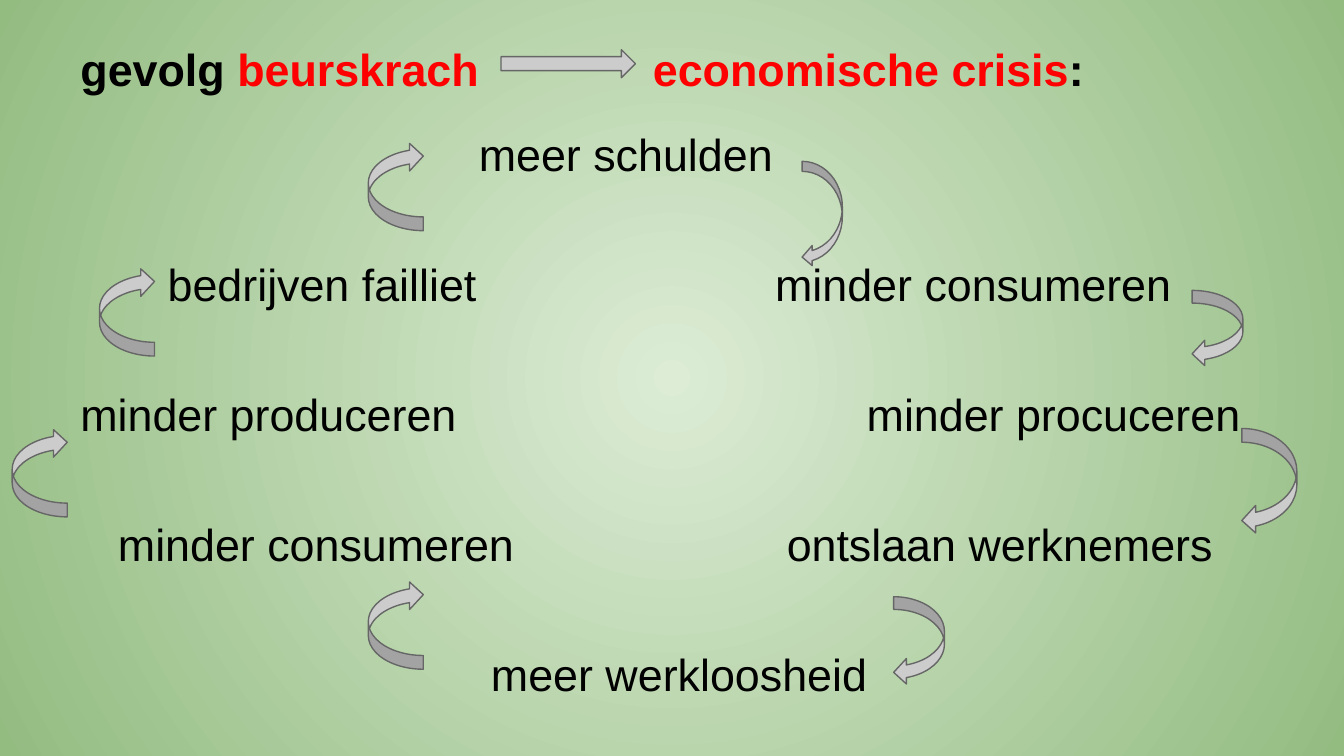
import pptx
import pptx.dml.color
import pptx.enum.shapes
import pptx.enum.text
import pptx.oxml
import pptx.oxml.ns
import pptx.util
from pptx.util import Cm

FONT = "Arial"
BLACK, RED = "000000", "FF0000"
ARROW_FILL, ARROW_LINE = "CCCCCC", "666666"
SHAPES = pptx.enum.shapes.MSO_SHAPE

ROW_TOP, ROW_PITCH, STEP_WIDTH, STEP_HEIGHT = 2.39, 2.46, 8.5, 1
STEPS = [
    ("meer schulden", 9.05, 0),
    ("bedrijven failliet", 3.17, 1),
    ("minder consumeren", 14.65, 1),
    ("minder produceren", 1.52, 2),
    ("minder procuceren", 16.38, 2),
    ("minder consumeren", 2.23, 3),
    ("ontslaan werknemers", 14.87, 3),
    ("meer werkloosheid", 9.28, 4),
]
DOWN_ARROWS = [
    (15.16, 3.05, 0.76, 2),
    (22.53, 5.49, 0.96, 1.44),
    (23.47, 8.1, 1.04, 2),
    (16.89, 11.28, 0.96, 1.67),
]
UP_ARROWS = [(6.96, 10.98), (1.88, 5.06), (0.23, 8.1), (6.96, 2.69)]
UP_ARROW_SIZE = (1.04, 1.67)


def color(value):
    return pptx.dml.color.RGBColor.from_string(value)


def format_run(run, value, bold=False):
    run.font.name = FONT
    run.font.size = pptx.util.Pt(24)
    run.font.bold = bold
    run.font.color.rgb = color(value)


def set_background(slide):
    fill = slide.background.fill
    fill.gradient()
    for stop, position, value in zip(fill.gradient_stops, (0, 1), ("DCECD5", "93BC81")):
        stop.position = position
        stop.color.rgb = color(value)
    linear = next(slide.element.iter(pptx.oxml.ns.qn("a:lin")))
    radial = pptx.oxml.parse_xml(
        f'<a:path {pptx.oxml.ns.nsdecls("a")} path="circle">'
        '<a:fillToRect l="50000" t="50000" r="50000" b="50000"/></a:path>'
    )
    linear.getparent().replace(linear, radial)


def add_title(slide, left, top, width, height):
    title = slide.shapes.title
    title.left, title.top, title.width, title.height = map(Cm, (left, top, width, height))
    frame = title.text_frame
    frame.auto_size = pptx.enum.text.MSO_AUTO_SIZE.NONE
    frame.vertical_anchor = pptx.enum.text.MSO_ANCHOR.BOTTOM
    frame.margin_left = frame.margin_right = Cm(0.25)
    frame.margin_top = frame.margin_bottom = Cm(0.25)
    paragraph = frame.paragraphs[0]
    paragraph.alignment = pptx.enum.text.PP_ALIGN.LEFT
    paragraph.line_spacing = 1.0
    properties = paragraph._p.get_or_add_pPr()
    properties.append(pptx.oxml.parse_xml(
        f'<a:tabLst {pptx.oxml.ns.nsdecls("a")}><a:tab pos="{Cm(10.82)}" algn="l"/></a:tabLst>'
    ))
    for text, value in (
        ("gevolg ", BLACK),
        ("beurskrach\teconomische crisis", RED),
        (":", BLACK),
    ):
        run = paragraph.add_run()
        run.text = text
        format_run(run, value, bold=True)


def add_step(slide, text, left, top, width, height):
    box = slide.shapes.add_textbox(*map(Cm, (left, top, width, height)))
    frame = box.text_frame
    frame.word_wrap = True
    frame.margin_left = frame.margin_right = frame.margin_top = frame.margin_bottom = 0
    frame.text = text
    format_run(frame.paragraphs[0].runs[0], BLACK)


def add_arrow(slide, kind, left, top, width, height, rotation=0):
    arrow = slide.shapes.add_shape(kind, *map(Cm, (left, top, width, height)))
    arrow.rotation = rotation
    arrow.shadow.inherit = False
    arrow.fill.solid()
    arrow.fill.fore_color.rgb = color(ARROW_FILL)
    arrow.line.color.rgb = color(ARROW_LINE)
    arrow.line.width = pptx.util.Pt(0.75)


def add_cycle(slide):
    for text, left, row in STEPS:
        add_step(slide, text, left, ROW_TOP + row * ROW_PITCH, STEP_WIDTH, STEP_HEIGHT)
    for box in DOWN_ARROWS:
        add_arrow(slide, SHAPES.CURVED_LEFT_ARROW, *box)
    for corner in UP_ARROWS:
        add_arrow(slide, SHAPES.CURVED_LEFT_ARROW, *corner, *UP_ARROW_SIZE, rotation=180)


def main():
    presentation = pptx.Presentation()
    presentation.slide_width = Cm(25.4)
    presentation.slide_height = Cm(14.29)
    slide = presentation.slides.add_slide(presentation.slide_layouts.get_by_name("Title Only"))
    set_background(slide)
    add_title(slide, 1.27, 0.38, 22.86, 1.68)
    add_cycle(slide)
    add_arrow(slide, SHAPES.RIGHT_ARROW, 9.47, 0.94, 2.54, 0.53)
    presentation.save("out.pptx")


if __name__ == "__main__":
    main()
